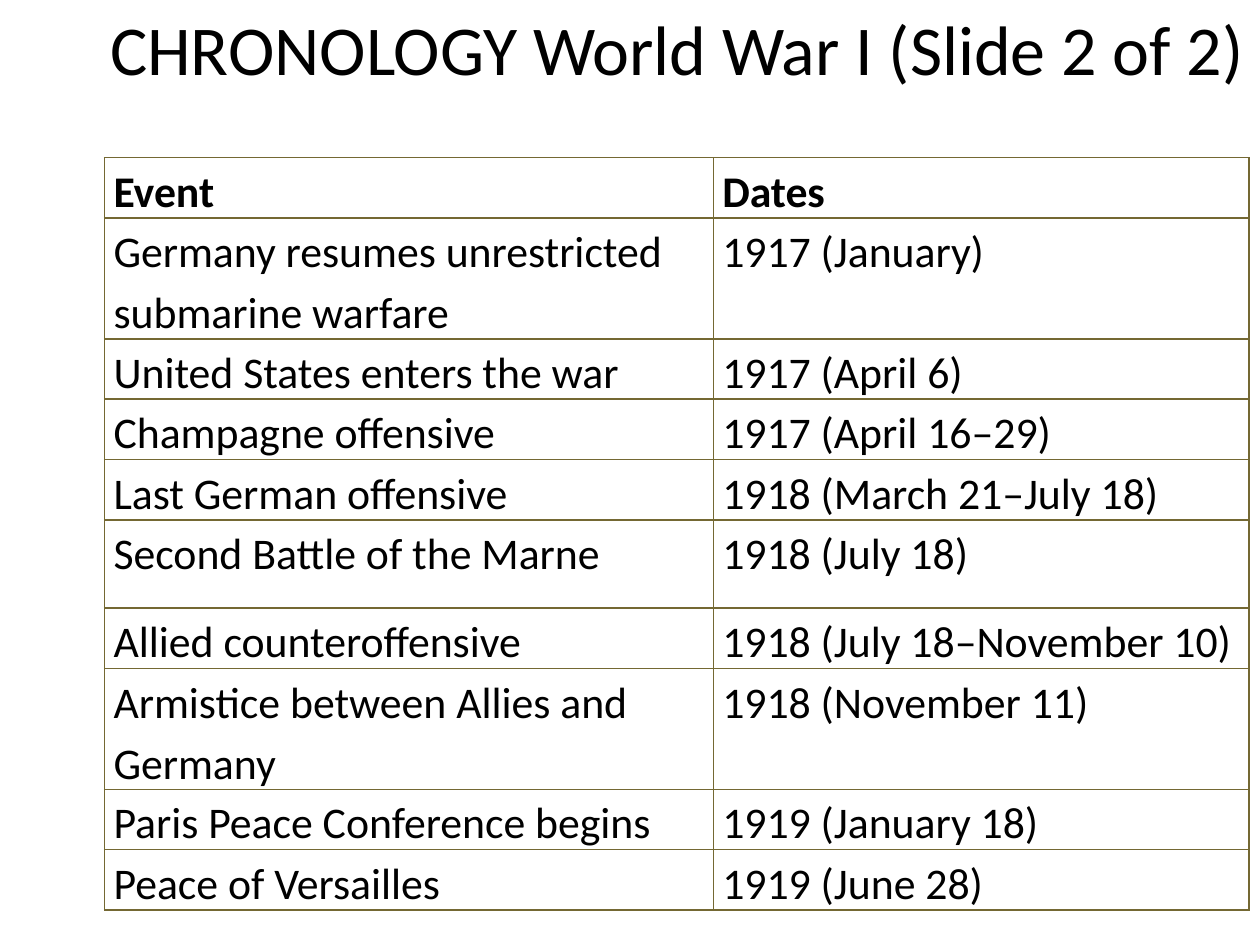
"""Build the World War I chronology slide with its title and table of events."""

from dataclasses import dataclass

from lxml import etree
from pptx import Presentation
from pptx.dml.color import RGBColor
from pptx.enum.text import MSO_ANCHOR, PP_ALIGN
from pptx.oxml.ns import qn
from pptx.slide import Slide
from pptx.table import _Cell
from pptx.text.text import _Paragraph
from pptx.util import Cm, Pt

CENTER = PP_ALIGN.CENTER
MIDDLE = MSO_ANCHOR.MIDDLE
TOP = MSO_ANCHOR.TOP


@dataclass(frozen=True)
class Theme:
    font: str = "Calibri"
    ink: str = "000000"
    border: str = "746833"
    border_width: int = Pt(1)
    title_size: int = Pt(40)
    table_size: int = Pt(25)
    line_spacing: float = 1.15


@dataclass(frozen=True)
class Entry:
    event: str
    dates: str
    height: float = 1.14


THEME = Theme()
COLUMN_WIDTHS = (Cm(12.27), Cm(10.8))
ENTRIES = (
    Entry("Event", "Dates"),
    Entry("Germany resumes unrestricted submarine warfare", "1917 (January)"),
    Entry("United States enters the war", "1917 (April 6)"),
    Entry("Champagne offensive", "1917 (April 16–29)"),
    Entry("Last German offensive", "1918 (March 21–July 18)"),
    Entry("Second Battle of the Marne", "1918 (July 18)", height=1.78),
    Entry("Allied counteroffensive", "1918 (July 18–November 10)"),
    Entry("Armistice between Allies and Germany", "1918 (November 11)"),
    Entry("Paris Peace Conference begins", "1919 (January 18)"),
    Entry("Peace of Versailles", "1919 (June 28)"),
)


def add_span(para: _Paragraph, text: str, size: int, bold: bool = False) -> None:
    """Add one run of text in the theme's font and ink."""
    span = para.add_run()
    span.text = text
    span.font.name = THEME.font
    span.font.size = size
    span.font.bold = bold
    span.font.color.rgb = RGBColor.from_string(THEME.ink)


def draw_borders(cell: _Cell) -> None:
    """Draw a solid line on all four sides of a cell."""
    properties = cell._tc.get_or_add_tcPr()
    for side in ("a:lnL", "a:lnR", "a:lnT", "a:lnB"):
        line = etree.SubElement(properties, qn(side), w=str(THEME.border_width))
        fill = etree.SubElement(line, qn("a:solidFill"))
        etree.SubElement(fill, qn("a:srgbClr"), val=THEME.border)


def fill_cell(cell: _Cell, text: str, bold: bool) -> None:
    """Write and style one table cell."""
    cell.margin_left = cell.margin_right = Cm(0.18)
    cell.margin_top = cell.margin_bottom = Cm(0)
    cell.vertical_anchor = TOP
    draw_borders(cell)
    cell.fill.background()
    para = cell.text_frame.paragraphs[0]
    para.line_spacing = THEME.line_spacing
    add_span(para, text, THEME.table_size, bold)


def add_title(page: Slide, text: str) -> None:
    """Add the centred slide title."""
    box = page.shapes.add_textbox(Cm(1.9), Cm(0.43), Cm(23.5), Cm(1.07))
    frame = box.text_frame
    frame.word_wrap = True
    frame.vertical_anchor = MIDDLE
    frame.margin_left = frame.margin_right = Cm(0)
    frame.margin_top = frame.margin_bottom = Cm(0)
    para = frame.paragraphs[0]
    para.alignment = CENTER
    add_span(para, text, THEME.title_size)


def add_chronology(page: Slide, entries: tuple[Entry, ...]) -> None:
    """Add the table of events, with the first entry as its heading."""
    height = Cm(15.16)
    holder = page.shapes.add_table(
        len(entries), len(COLUMN_WIDTHS), Cm(2.11), Cm(3.18), sum(COLUMN_WIDTHS), height
    )
    table = holder.table
    table.horz_banding = False
    table.first_row = False
    for column, width in zip(table.columns, COLUMN_WIDTHS):
        column.width = width
    for index, (row, entry) in enumerate(zip(table.rows, entries)):
        row.height = Cm(entry.height)
        for cell, text in zip(row.cells, (entry.event, entry.dates)):
            fill_cell(cell, text, bold=index == 0)
    holder.height = height


def main() -> None:
    """Create the deck and save it."""
    deck = Presentation()
    deck.slide_width, deck.slide_height = Cm(25.4), Cm(19.05)
    page = deck.slides.add_slide(deck.slide_layouts[6])
    add_title(page, "CHRONOLOGY World War I (Slide 2 of 2)")
    add_chronology(page, ENTRIES)
    deck.save("out.pptx")


if __name__ == "__main__":
    main()
